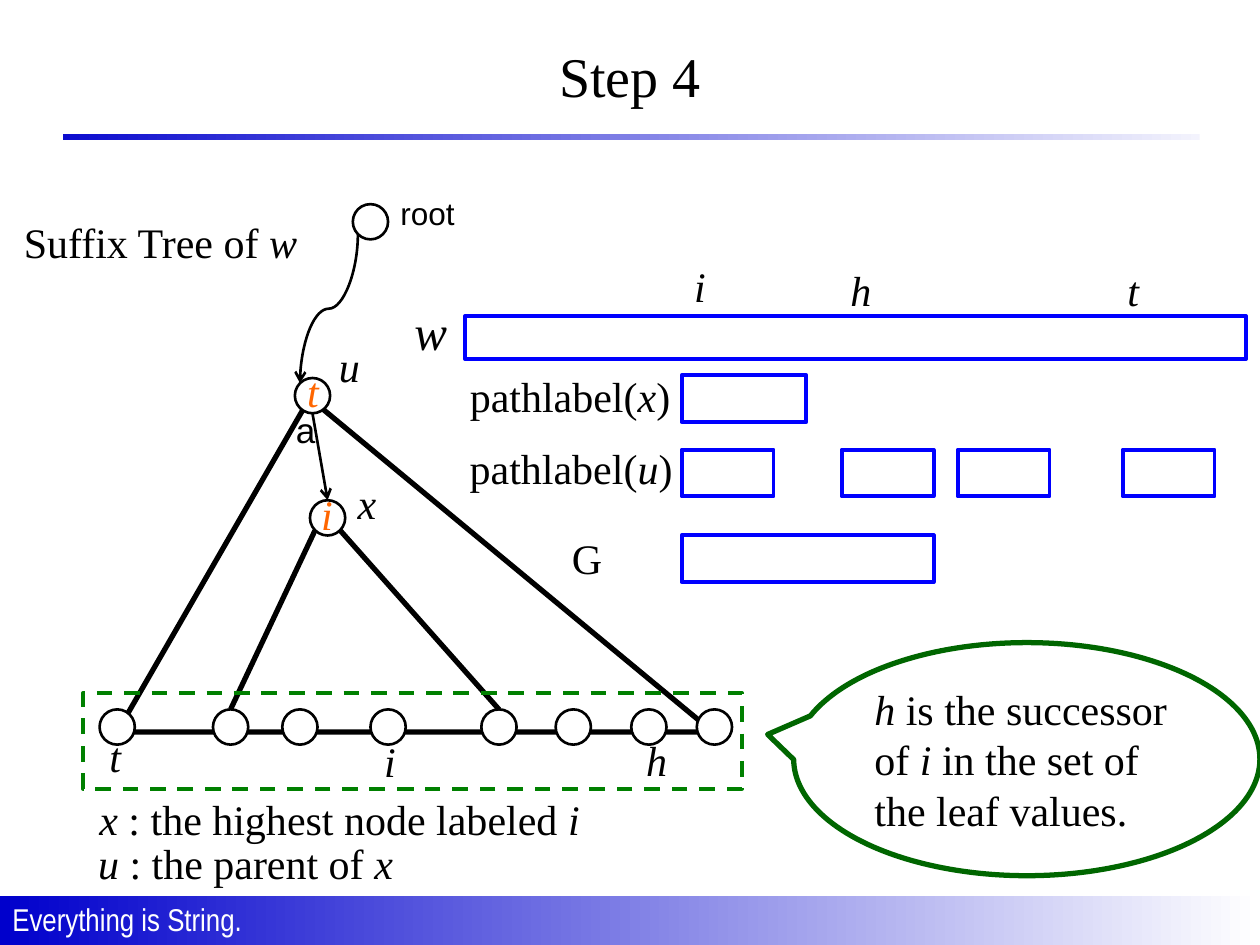
from dataclasses import dataclass

from lxml.etree import SubElement
from pptx import Presentation
from pptx.dml.color import RGBColor
from pptx.enum.dml import MSO_LINE
from pptx.enum.shapes import MSO_CONNECTOR, MSO_SHAPE
from pptx.enum.text import MSO_ANCHOR, MSO_AUTO_SIZE, PP_ALIGN
from pptx.oxml.ns import qn
from pptx.shapes.autoshape import Shape
from pptx.shapes.connector import Connector
from pptx.slide import Slide
from pptx.text.text import TextFrame
from pptx.util import Emu, Pt

EMU_PER_PX = 9144  # 100 px to the inch


@dataclass(frozen=True)
class Theme:
    black: str = "000000"
    white: str = "FFFFFF"
    band: str = "0000CC"
    bar: str = "0000FF"
    tag: str = "FF6600"
    leaf_set: str = "008000"
    callout: str = "006600"
    serif: str = "Times New Roman"
    sans: str = "Arial"
    narrow: str = "Arial Narrow"
    title: int = 32
    word: int = 28
    body: int = 24
    edge_label: int = 20
    small: int = 18
    thin: float = 1.5
    medium: float = 2.25
    thick: float = 3


THEME = Theme()


@dataclass(frozen=True)
class Area:
    left: int
    top: int
    width: int
    height: int

    def emu(self) -> list[Emu]:
        return [px(v) for v in (self.left, self.top, self.width, self.height)]


@dataclass(frozen=True)
class Label:
    """Text in which *asterisks* enclose italics."""
    area: Area
    text: str
    size: int = THEME.body
    font: str = THEME.serif
    color: str = THEME.black


NODE = 28
LEAF_TOP = 563
LEAF_LEFTS = (79, 169, 224, 294, 382, 441, 501, 553)
BAR_HEIGHT = 37
BARS = (
    Area(369, 251, 620, 34),
    Area(541, 298, 99, BAR_HEIGHT),
    *(Area(left, 357, 73, BAR_HEIGHT) for left in (541, 668, 760, 891)),
    Area(541, 425, 200, BAR_HEIGHT),
)
LABELS = (
    Label(Area(308, 149, 64, 40), "root", THEME.small, THEME.sans),
    Label(Area(225, 319, 36, 44), "a", THEME.edge_label, THEME.sans),
    Label(Area(234, 285, 34, 50), "*t*", color=THEME.tag),
    Label(Area(245, 383, 32, 50), "*i*", color=THEME.tag),
    Label(Area(259, 265, 41, 50), "*u*"),
    Label(Area(274, 374, 38, 50), "*x*"),
    Label(Area(77, 575, 34, 50), "*t*"),
    Label(Area(295, 579, 32, 50), "*i*"),
    Label(Area(503, 578, 39, 50), "*h*"),
    Label(Area(9, 167, 249, 50), "Suffix Tree of *w*"),
    Label(Area(69, 625, 415, 50), "*x *: the highest node labeled *i*"),
    Label(Area(68, 660, 266, 50), "*u *: the parent of *x*"),
    Label(Area(541, 202, 32, 50), "*i*"),
    Label(Area(665, 205, 39, 50), "*h*"),
    Label(Area(885, 205, 34, 50), "*t*"),
    Label(Area(319, 234, 49, 57), "*w*", THEME.word),
    Label(Area(363, 289, 181, 50), "pathlabel(*x*)"),
    Label(Area(363, 346, 183, 50), "pathlabel(*u*)"),
    Label(Area(444, 418, 45, 50), "G"),
)


def px(value: int) -> Emu:
    return Emu(value * EMU_PER_PX)


def rgb(color: str) -> RGBColor:
    return RGBColor.from_string(color)


def add_figure(page: Slide, kind: MSO_SHAPE, area: Area, fill: str = "",
               line: str = "", weight: float = THEME.thin) -> Shape:
    """Draw a preset shape; an empty colour means no fill or no line."""
    shape = page.shapes.add_shape(kind, *area.emu())
    shape.shadow.inherit = False
    if fill:
        shape.fill.solid()
        shape.fill.fore_color.rgb = rgb(fill)
    else:
        shape.fill.background()
    if line:
        shape.line.color.rgb = rgb(line)
        shape.line.width = Pt(weight)
    else:
        shape.line.fill.background()
    return shape


def add_band(page: Slide, area: Area) -> None:
    """Draw a bar that fades from blue to white, left to right."""
    band = add_figure(page, MSO_SHAPE.RECTANGLE, area)
    band.fill.gradient()
    band.fill.gradient_angle = 0
    colors = (THEME.band, THEME.white)
    for position, (stop, color) in enumerate(zip(band.fill.gradient_stops, colors)):
        stop.position = position
        stop.color.rgb = rgb(color)


def add_node(page: Slide, left: int, top: int) -> Shape:
    return add_figure(page, MSO_SHAPE.OVAL, Area(left, top, NODE, NODE),
                      THEME.white, THEME.black)


def write(frame: TextFrame, label: Label) -> None:
    para = frame.paragraphs[0]
    para.alignment = PP_ALIGN.LEFT
    for index, part in enumerate(label.text.split("*")):
        if part:
            span = para.add_run()
            span.text = part
            span.font.name = label.font
            span.font.size = Pt(label.size)
            span.font.italic = index % 2 == 1
            span.font.color.rgb = rgb(label.color)


def add_label(page: Slide, label: Label) -> TextFrame:
    frame = page.shapes.add_textbox(*label.area.emu()).text_frame
    frame.word_wrap = False
    frame.auto_size = MSO_AUTO_SIZE.SHAPE_TO_FIT_TEXT
    write(frame, label)
    return frame


def add_edge(page: Slide, start: tuple[int, int], end: tuple[int, int],
             weight: float, arrow: bool = False,
             kind: MSO_CONNECTOR = MSO_CONNECTOR.STRAIGHT) -> Connector:
    edge = page.shapes.add_connector(kind, *(px(v) for v in (*start, *end)))
    edge.line.color.rgb = rgb(THEME.black)
    edge.line.width = Pt(weight)
    properties = edge._element.spPr
    if arrow:
        SubElement(properties.find(qn("a:ln")), qn("a:tailEnd"), type="arrow")
    SubElement(properties, qn("a:effectLst"))
    return edge


def draw_frame(page: Slide) -> None:
    """Draw the title, the rule below it and the footer band."""
    add_band(page, Area(0, 711, 1000, 39))
    add_label(page, Label(Area(0, 709, 222, 40), "Everything is String.",
                          THEME.small, THEME.narrow, THEME.white))
    add_band(page, Area(0, 106, 1000, 5))
    for left, width in ((0, 50), (952, 48)):
        add_figure(page, MSO_SHAPE.RECTANGLE, Area(left, 80, width, 75), THEME.white)
    title = add_label(page, Label(Area(50, 13, 900, 93), "Step 4", THEME.title))
    title.auto_size = MSO_AUTO_SIZE.NONE
    title.word_wrap = True
    title.vertical_anchor = MSO_ANCHOR.MIDDLE
    title.paragraphs[0].alignment = PP_ALIGN.CENTER


def draw_tree(page: Slide) -> None:
    subtree = add_figure(page, MSO_SHAPE.ISOSCELES_TRIANGLE, Area(93, 316, 473, 265),
                         line=THEME.black, weight=THEME.thick)
    subtree.adjustments[0] = 0.323
    add_node(page, 280, 162)
    add_node(page, 234, 300)
    inner = add_node(page, 246, 397)
    leaves = [add_node(page, left, LEAF_TOP) for left in LEAF_LEFTS]

    root_path = add_edge(page, (202, 222), (320, 268), THEME.thin, True,
                         MSO_CONNECTOR.CURVE)
    root_path._element.spPr.find(qn("a:xfrm")).set("rot", str(90 * 60000))
    for start, target, weight, arrow in (
        ((250, 421), leaves[1], THEME.thick, False),
        ((270, 421), leaves[4], THEME.thick, False),
        ((248, 328), inner, THEME.thin, True),
    ):
        add_edge(page, start, start, weight, arrow).end_connect(target, 0)

    leaf_set = add_figure(page, MSO_SHAPE.RECTANGLE, Area(66, 550, 523, 76),
                          line=THEME.leaf_set, weight=THEME.medium)
    leaf_set.line.dash_style = MSO_LINE.DASH


def draw_callout(page: Slide) -> None:
    area = Area(630, 510, 370, 185)
    callout = add_figure(page, MSO_SHAPE.OVAL_CALLOUT, area,
                         line=THEME.callout, weight=THEME.thick)
    callout.adjustments[0], callout.adjustments[1] = -0.556, -0.106
    callout.text_frame.word_wrap = True
    callout.text_frame.vertical_anchor = MSO_ANCHOR.MIDDLE
    write(callout.text_frame,
          Label(area, "*h* is the successor of *i* in the set of the leaf values."))


def main() -> None:
    deck = Presentation()
    deck.slide_width, deck.slide_height = px(1000), px(750)
    page = deck.slides.add_slide(deck.slide_layouts[6])
    draw_frame(page)
    draw_tree(page)
    for area in BARS:
        add_figure(page, MSO_SHAPE.RECTANGLE, area, line=THEME.bar, weight=THEME.medium)
    for label in LABELS:
        add_label(page, label)
    draw_callout(page)
    deck.save("out.pptx")


if __name__ == "__main__":
    main()
